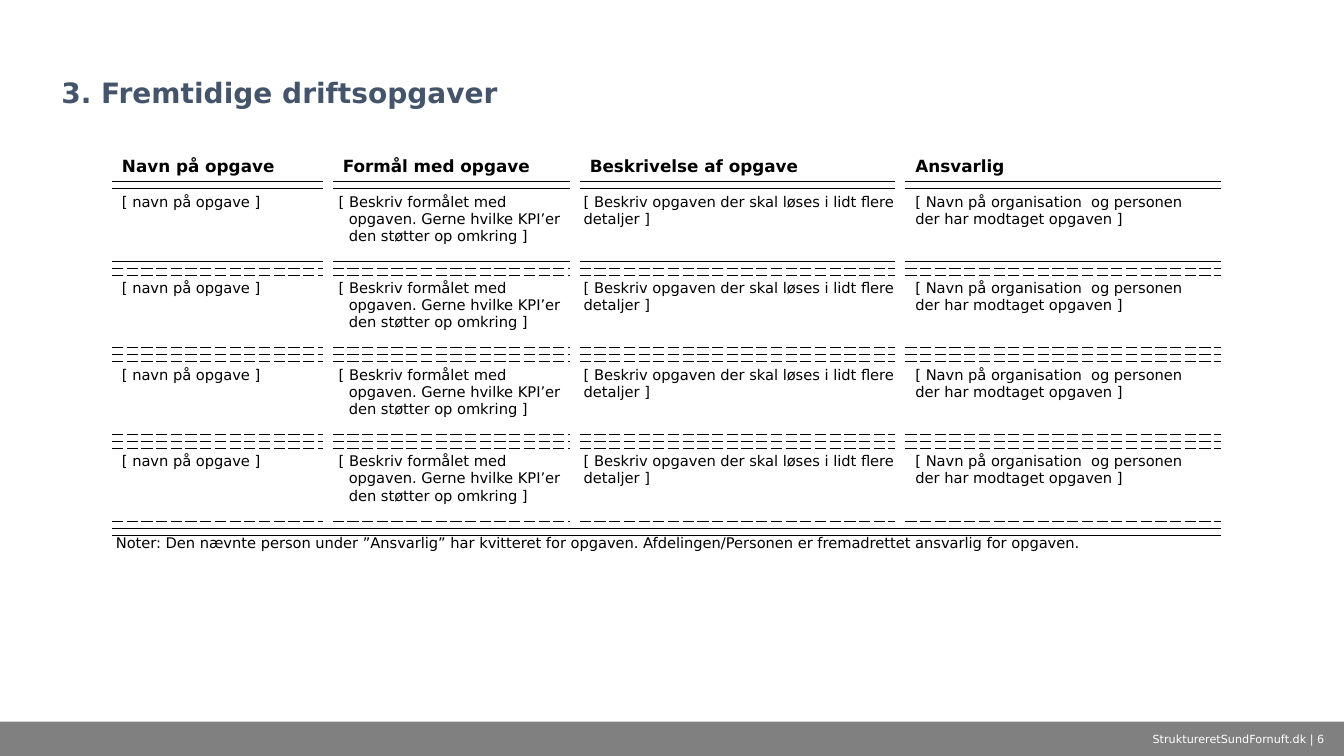
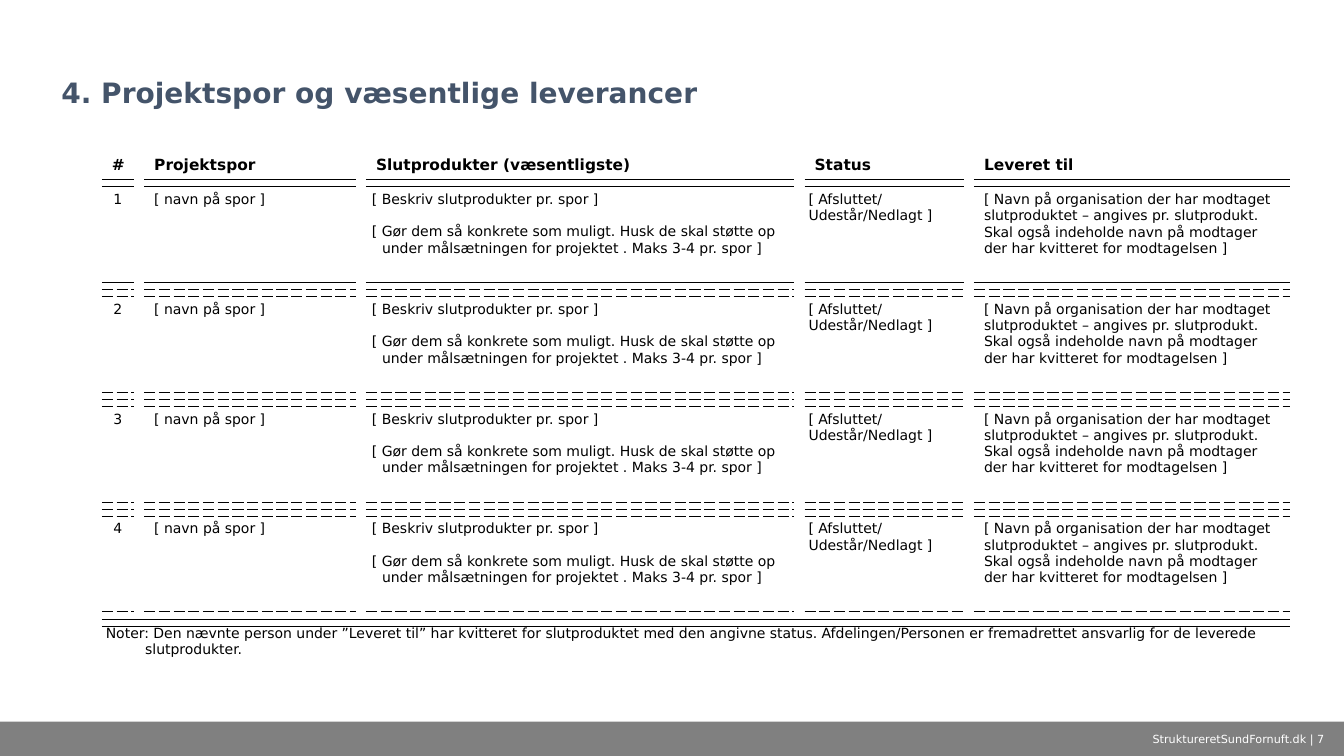
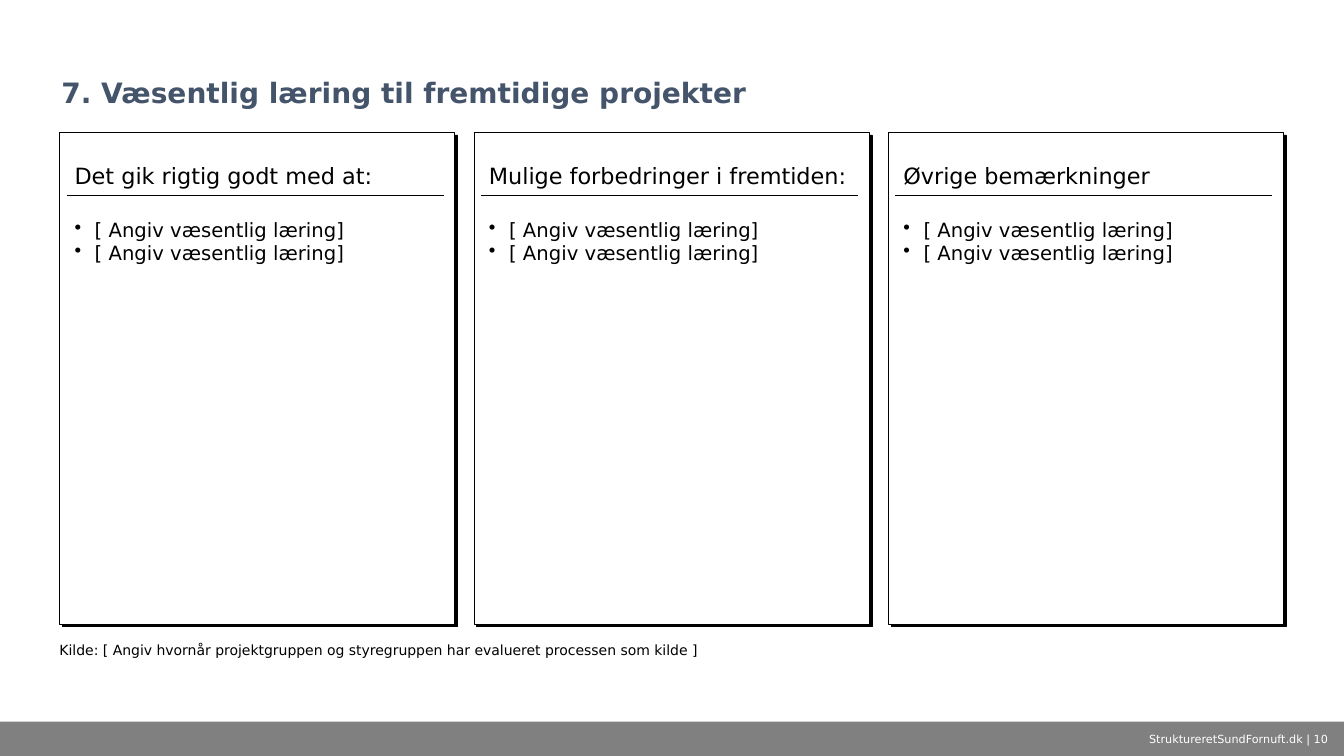
from copy import deepcopy

from lxml import etree
from pptx import Presentation
from pptx.dml.color import RGBColor
from pptx.enum.shapes import MSO_CONNECTOR, MSO_SHAPE
from pptx.enum.text import MSO_ANCHOR, PP_ALIGN
from pptx.oxml.ns import qn
from pptx.util import Inches, Pt

RECTANGLE, STRAIGHT = MSO_SHAPE.RECTANGLE, MSO_CONNECTOR.STRAIGHT
TOP, MIDDLE, BOTTOM = MSO_ANCHOR.TOP, MSO_ANCHOR.MIDDLE, MSO_ANCHOR.BOTTOM
CENTER = PP_ALIGN.CENTER

FONT = "DejaVu Sans"
BLACK, WHITE, GREY, SLATE = "000000", "FFFFFF", "808080", "44546A"
SLIDE_WIDTH, SLIDE_HEIGHT = 13.33, 7.5
FOOTER_TOP, FOOTER_HEIGHT = 7.16, 0.34
NO_GRID_STYLE = "{2D5ABB26-0587-4C30-8999-92F81FD0307C}"

COLUMN_GAP, SPACER_HEIGHT = 0.1, 0.07
HEADING_HEIGHT, NOTE_HEIGHT = 0.34, 0.5
ENTRY_COUNT = 4
ROWS_PER_ENTRY = 3

DEFAULT_INSETS = (0.1, 0.05, 0.1, 0.05)
PURPOSE_INSETS = (0.06, 0.05, 0, 0)
TIGHT_INSETS = (0.04, 0.05, 0, 0)
NOTE_INSETS = (0.04, 0, 0.04, 0)
CARD_INSETS = (0.08, 0.06, 0.08, 0.06)
NO_INSETS = (0, 0, 0, 0)

HANGING = {"hang": 0.1}

TASK_COLUMNS = [
    (2.09, "Navn på opgave", ["[ navn på opgave ]"], DEFAULT_INSETS, {}),
    (2.35, "Formål med opgave",
     ["[ Beskriv formålet med opgaven. Gerne hvilke KPI’er den støtter op omkring ]"],
     PURPOSE_INSETS, HANGING),
    (3.13, "Beskrivelse af opgave",
     ["[ Beskriv opgaven der skal løses i lidt flere detaljer ]"], TIGHT_INSETS, {}),
    (3.13, "Ansvarlig",
     ["[ Navn på organisation  og personen der har modtaget opgaven ]"],
     DEFAULT_INSETS, {}),
]
TASK_NOTE = ("Noter: Den nævnte person under ”Ansvarlig” har kvitteret for opgaven. "
             "Afdelingen/Personen er fremadrettet ansvarlig for opgaven.")

TRACK_COLUMNS = [
    (0.32, "#", ["{number}"], DEFAULT_INSETS, {"alignment": CENTER}),
    (2.1, "Projektspor", ["[ navn på spor ]"], DEFAULT_INSETS, {}),
    (4.25, "Slutprodukter (væsentligste)",
     ["[ Beskriv slutprodukter pr. spor ]",
      "[ Gør dem så konkrete som muligt. Husk de skal støtte op under målsætningen "
      "for projektet . Maks 3-4 pr. spor ]"],
     PURPOSE_INSETS, {"hang": 0.1, "gap": 11.6}),
    (1.58, "Status", ["[ Afsluttet/\vUdestår/Nedlagt ]"], TIGHT_INSETS, {}),
    (3.14, "Leveret til",
     ["[ Navn på organisation der har modtaget slutproduktet – angives pr. slutprodukt. "
      "Skal også indeholde navn på modtager der har kvitteret for modtagelsen ]"],
     DEFAULT_INSETS, {}),
]
TRACK_NOTE = ("Noter: Den nævnte person under ”Leveret til” har kvitteret for slutproduktet "
              "med den angivne status. Afdelingen/Personen er fremadrettet ansvarlig for "
              "de leverede slutprodukter.")

LESSON_HEADINGS = ["Det gik rigtig godt med at:", "Mulige forbedringer i fremtiden:",
                   "Øvrige bemærkninger"]
LESSONS = ["[ Angiv væsentlig læring]"] * 2
LESSON_SOURCE = ("Kilde: [ Angiv hvornår projektgruppen og styregruppen har evalueret "
                 "processen som kilde ]")


def color(hex_value):
    return RGBColor.from_string(hex_value)


def set_attributes(target, values):
    for name, value in values.items():
        setattr(target, name, value)


def set_insets(target, insets):
    sides = ("margin_left", "margin_top", "margin_right", "margin_bottom")
    set_attributes(target, dict(zip(sides, map(Inches, insets))))


def write(frame, texts, size, ink=BLACK, bold=False, hang=0, bullet=None, gap=0, **layout):
    for index, text in enumerate(texts):
        paragraph = frame.paragraphs[0] if index == 0 else frame.add_paragraph()
        paragraph.text = text
        set_attributes(paragraph, layout)
        if index and gap:
            paragraph.space_before = Pt(gap)
        properties = paragraph._p.get_or_add_pPr()
        if hang:
            properties.set("marL", str(Inches(hang)))
            properties.set("indent", str(-Inches(hang)))
        if bullet:
            etree.SubElement(properties, qn("a:buChar"), char=bullet)
        for run in paragraph.runs:
            set_attributes(run.font, {"name": FONT, "size": Pt(size), "bold": bold})
            run.font.color.rgb = color(ink)
        for line_break in paragraph._p.findall(qn("a:br")):
            line_break.append(deepcopy(paragraph.runs[0]._r.rPr))


def add_text(shapes, box, texts, size, insets=DEFAULT_INSETS, anchor=TOP, **style):
    frame = shapes.add_textbox(*map(Inches, box)).text_frame
    set_attributes(frame, {"word_wrap": True, "vertical_anchor": anchor})
    set_insets(frame, insets)
    write(frame, texts, size, **style)


def add_framed_slide(deck, title, number):
    shapes = deck.slides.add_slide(deck.slide_layouts[6]).shapes
    band = shapes.add_shape(RECTANGLE, *map(Inches, (0, FOOTER_TOP, SLIDE_WIDTH, FOOTER_HEIGHT)))
    band.shadow.inherit = False
    band.fill.solid()
    band.fill.fore_color.rgb = color(GREY)
    band.line.fill.background()
    add_text(shapes, (0.51, 0.17, 12.31, 0.97), [title], 20, anchor=BOTTOM,
             ink=SLATE, bold=True, line_spacing=0.9)
    add_text(shapes, (11.24, FOOTER_TOP, 2.09, FOOTER_HEIGHT),
             [f"StruktureretSundFornuft.dk | {number}"], 8, anchor=MIDDLE,
             ink=WHITE, alignment=CENTER)
    return shapes


def add_border(cell, side, dash):
    properties = cell._tc.get_or_add_tcPr()
    line = etree.Element(qn(side), w=str(Pt(0.25)))
    fill = etree.SubElement(line, qn("a:solidFill"))
    etree.SubElement(fill, qn("a:srgbClr"), val=BLACK)
    etree.SubElement(line, qn("a:prstDash"), val=dash)
    properties.insert(1 if properties.find(qn("a:lnT")) is not None else 0, line)


def rule_below(table, row, columns, dash):
    for column in columns:
        add_border(table.cell(row, column), "a:lnB", dash)
        below = table.cell(row + 1, column)
        add_border(below, "a:lnT", dash)


def clear_cell(cell):
    cell.fill.background()
    set_insets(cell, NO_INSETS)
    paragraph = cell.text_frame.paragraphs[0]._p
    etree.SubElement(paragraph, qn("a:endParaRPr"), sz="100")


def fill_cell(cell, texts, size, insets=DEFAULT_INSETS, anchor=TOP, **style):
    for end_mark in cell.text_frame.paragraphs[0]._p.findall(qn("a:endParaRPr")):
        end_mark.getparent().remove(end_mark)
    set_insets(cell, insets)
    cell.vertical_anchor = anchor
    write(cell.text_frame, texts, size, **style)


def add_register(shapes, left, top, columns, entry_height, heading_size, body_size, note):
    widths = [columns[0][0]]
    for width, *_ in columns[1:]:
        widths += [COLUMN_GAP, width]
    heights = [HEADING_HEIGHT, SPACER_HEIGHT]
    heights += [entry_height, SPACER_HEIGHT, SPACER_HEIGHT] * ENTRY_COUNT + [NOTE_HEIGHT]
    box = (left, top, sum(widths), sum(heights))
    table = shapes.add_table(len(heights), len(widths), *map(Inches, box)).table
    set_attributes(table, {"first_row": False, "horz_banding": False})
    table._tbl.tblPr.find(qn("a:tableStyleId")).text = NO_GRID_STYLE
    for column, width in zip(table.columns, widths):
        column.width = Inches(width)
    for row, height in zip(table.rows, heights):
        row.height = Inches(height)
    for cell in table.iter_cells():
        clear_cell(cell)

    for index, (_, heading, texts, insets, style) in enumerate(columns):
        position = 2 * index
        fill_cell(table.cell(0, position), [heading], heading_size, anchor=BOTTOM, bold=True)
        for entry in range(ENTRY_COUNT):
            fill_cell(table.cell(2 + ROWS_PER_ENTRY * entry, position),
                      [text.format(number=entry + 1) for text in texts],
                      body_size, insets, **style)

    last_row, last_column = len(heights) - 1, len(widths) - 1
    for row in (last_row - 1, last_row):
        table.cell(row, 0).merge(table.cell(row, last_column))
    fill_cell(table.cell(last_row, 0), [note], body_size, NOTE_INSETS, hang=0.39)

    for spacer in range(1, last_row, ROWS_PER_ENTRY):
        closing = spacer == last_row - 1
        dash = "solid" if spacer == 1 or closing else "dash"
        ruled = range(0, len(widths), 1 if closing else 2)
        for row in (spacer - 1, spacer):
            rule_below(table, row, ruled, dash)


def add_lesson_card(shapes, left, top, width, height, heading):
    card = shapes.add_group_shape().shapes
    panel = card.add_shape(RECTANGLE, *map(Inches, (left, top, width, height)))
    panel.fill.solid()
    panel.fill.fore_color.rgb = color(WHITE)
    panel.line.color.rgb = color(BLACK)
    panel.line.width = Pt(0.5)
    panel.shadow.inherit = False
    effects = panel._element.spPr.find(qn("a:effectLst"))
    shadow = etree.SubElement(effects, qn("a:outerShdw"), blurRad="0", dist=str(Pt(3)),
                              dir="2700000", algn="tl", rotWithShape="0")
    etree.SubElement(shadow, qn("a:srgbClr"), val=BLACK)

    inner_left, inner_width, heading_height = left + 0.07, width - 0.18, 0.63
    rule_top = top + heading_height
    rule = card.add_connector(STRAIGHT, *map(Inches, (inner_left, rule_top,
                                                      inner_left + inner_width, rule_top)))
    rule.line.color.rgb = color(BLACK)
    rule.line.width = Pt(0.5)
    etree.SubElement(rule._element.spPr, qn("a:effectLst"))
    add_text(card, (inner_left, top, inner_width, heading_height), [heading], 16,
             CARD_INSETS, BOTTOM)
    add_text(card, (inner_left, top + 0.79, inner_width, height - 0.95), LESSONS, 14,
             CARD_INSETS, hang=0.2, bullet="•")


def add_lessons(shapes, left, top, width, height, gap):
    card_width = (width - gap * (len(LESSON_HEADINGS) - 1)) / len(LESSON_HEADINGS)
    for index, heading in enumerate(LESSON_HEADINGS):
        add_lesson_card(shapes, left + index * (card_width + gap), top, card_width, height, heading)
    add_text(shapes, (left, top + height + 0.17, 6.77, 0.17), [LESSON_SOURCE], 10, NO_INSETS)


def main():
    deck = Presentation()
    deck.slide_width, deck.slide_height = Inches(SLIDE_WIDTH), Inches(SLIDE_HEIGHT)
    tasks = add_framed_slide(deck, "3. Fremtidige driftsopgaver", 6)
    add_register(tasks, 1.11, 1.46, TASK_COLUMNS, 0.72, 12, 10.5, TASK_NOTE)
    tracks = add_framed_slide(deck, "4. Projektspor og væsentlige leverancer", 7)
    add_register(tracks, 1.01, 1.44, TRACK_COLUMNS, 0.95, 11, 10, TRACK_NOTE)
    lessons = add_framed_slide(deck, "7. Væsentlig læring til fremtidige projekter", 10)
    add_lessons(lessons, 0.59, 1.31, 12.14, 4.88, 0.19)
    deck.save("out.pptx")


if __name__ == "__main__":
    main()
